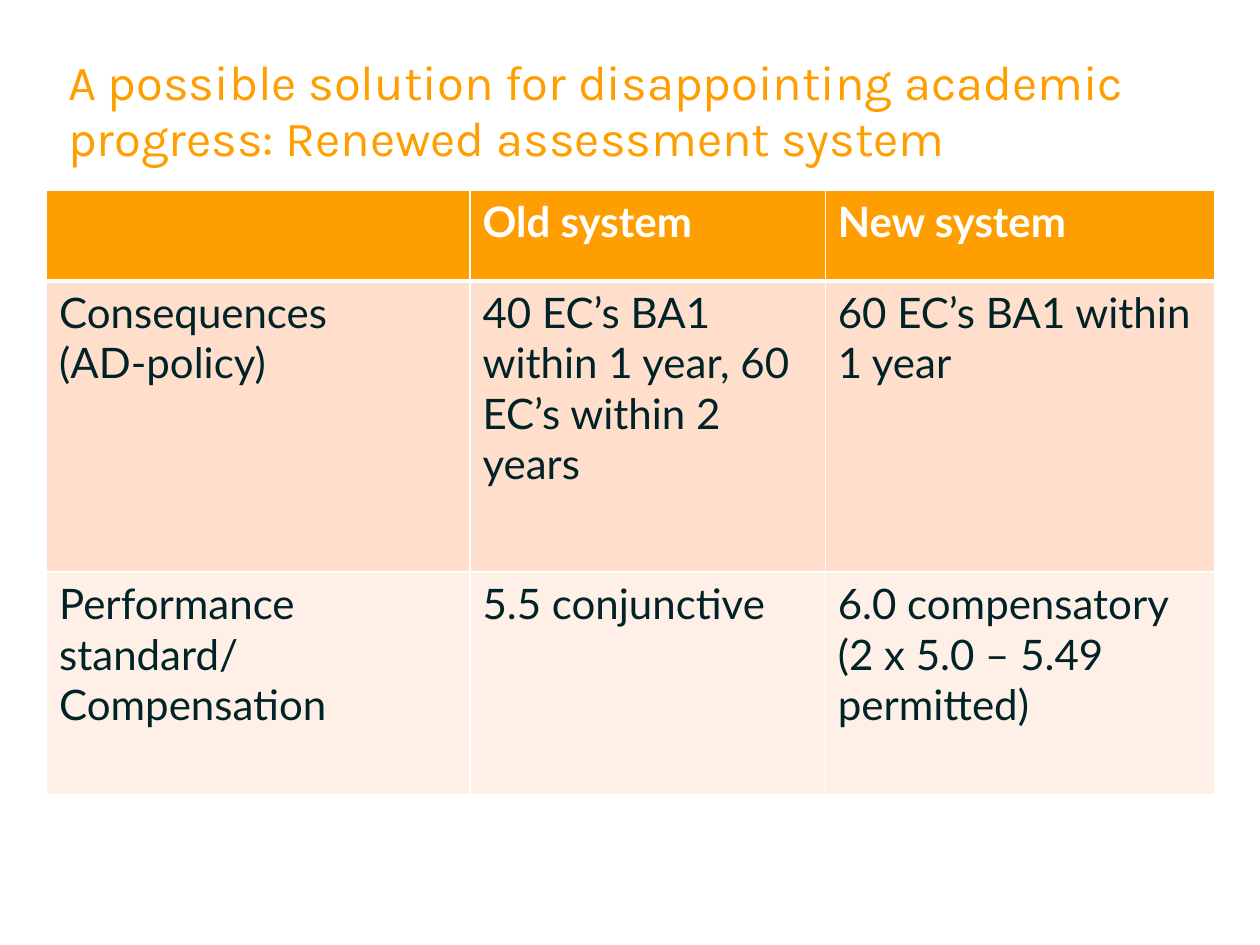
from lxml import etree
from pptx import Presentation
from pptx.dml.color import RGBColor
from pptx.enum.text import MSO_ANCHOR
from pptx.oxml.ns import qn
from pptx.util import Inches, Pt

THEME = {
    "title": {"name": "Karla", "size": Pt(28), "color": "FF9E00"},
    "header": {"name": "Lato", "size": Pt(24), "bold": True, "color": "FFFFFF"},
    "body": {"name": "Lato", "size": Pt(24), "bold": False, "color": "002328"},
    "row_fills": ["FF9E00", "FFDFCC", "FFF0E7"],
    "border": "FFFFFF",
    "border_width": Pt(1),
    "header_rule_width": Pt(3),
}
TITLE = "A possible solution for disappointing academic progress: Renewed assessment system"
COLUMN_WIDTHS = [3.36, 2.82, 3.09]
ROW_HEIGHTS = [0.72, 2.31, 1.77]
ROWS = [
    ["", "Old system", "New system"],
    ["Consequences \v(AD-policy)", "40 EC’s BA1 within 1 year, 60 EC’s within 2 years",
     "60 EC’s BA1 within 1 year"],
    ["Performance standard/\vCompensation", "5.5 conjunctive",
     "6.0 compensatory (2 x 5.0 – 5.49 permitted)"],
]


def write_text(text_frame, text, style):
    text_frame.text = text
    text_frame.word_wrap = True
    paragraph = text_frame.paragraphs[0]
    for font in [paragraph.font] + [run.font for run in paragraph.runs]:
        for attribute, value in style.items():
            if attribute == "color":
                font.color.rgb = RGBColor.from_string(value)
            else:
                setattr(font, attribute, value)
    return paragraph


def set_borders(cell, widths):
    properties = cell._tc.get_or_add_tcPr()
    for position, (side, width) in enumerate(widths.items()):
        line = etree.Element(qn(f"a:{side}"), w=str(width))
        fill = etree.SubElement(line, qn("a:solidFill"))
        etree.SubElement(fill, qn("a:srgbClr"), val=THEME["border"])
        properties.insert(position, line)


presentation = Presentation()
presentation.slide_width, presentation.slide_height = Inches(10), Inches(7.5)
slide = presentation.slides.add_slide(presentation.slide_layouts[6])

# Title
title = slide.shapes.add_textbox(Inches(0.54), Inches(0.43), Inches(8.94), Inches(0.91))
title_frame = title.text_frame
for margin in ("left", "top", "right", "bottom"):
    setattr(title_frame, f"margin_{margin}", 0)
title_frame.vertical_anchor = MSO_ANCHOR.TOP
write_text(title_frame, TITLE, THEME["title"]).line_spacing = Pt(32)

# Comparison table
table = slide.shapes.add_table(
    len(ROWS), len(COLUMN_WIDTHS), Inches(0.37), Inches(1.51),
    Inches(sum(COLUMN_WIDTHS)), Inches(sum(ROW_HEIGHTS))).table
for column, width in zip(table.columns, COLUMN_WIDTHS):
    column.width = Inches(width)

for row_index, texts in enumerate(ROWS):
    table.rows[row_index].height = Inches(ROW_HEIGHTS[row_index])
    style = THEME["body" if row_index else "header"]
    widths = dict.fromkeys(("lnL", "lnR", "lnT", "lnB"), THEME["border_width"])
    # A thicker rule separates the header from the body
    if row_index == 0:
        widths["lnB"] = THEME["header_rule_width"]
    elif row_index == 1:
        widths["lnT"] = THEME["header_rule_width"]
    for column_index, text in enumerate(texts):
        cell = table.cell(row_index, column_index)
        write_text(cell.text_frame, text, style)
        cell.fill.solid()
        cell.fill.fore_color.rgb = RGBColor.from_string(THEME["row_fills"][row_index])
        set_borders(cell, widths)

presentation.save("out.pptx")
